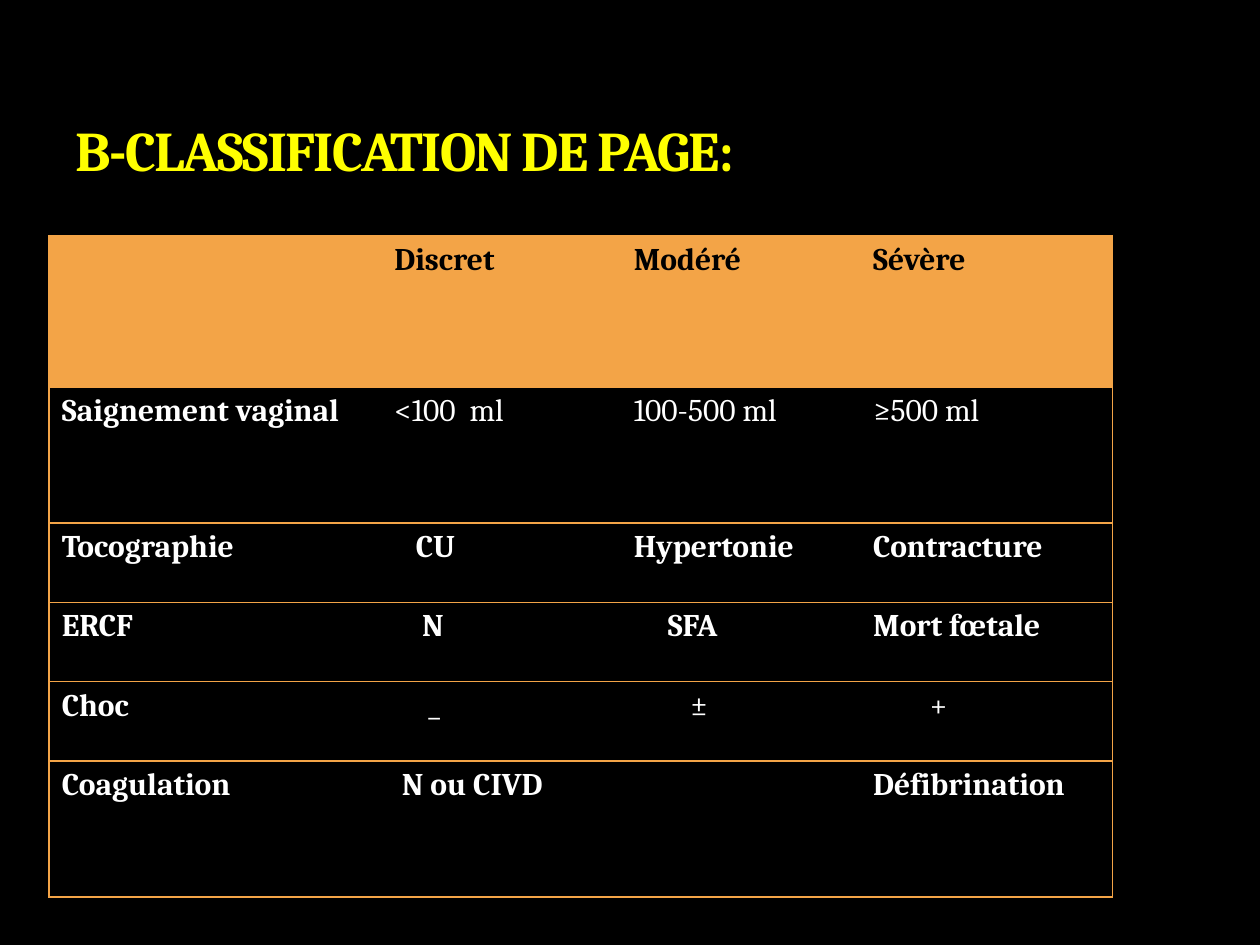
import pptx
import pptx.util
import pptx.dml.color
import pptx.enum.text
import pptx.oxml.ns
from dataclasses import dataclass
from lxml import etree

Inches = pptx.util.Inches
Pt = pptx.util.Pt
RGB = pptx.dml.color.RGBColor.from_string
qn = pptx.oxml.ns.qn


@dataclass(frozen=True)
class Theme:
    back: str = "000000"
    title: str = "FFFF00"
    edge: str = "3C4422"
    head: str = "000000"
    body: str = "FFFFFF"
    line: str = "F3A447"
    face: str = "Cambria"
    big: int = 32
    small: int = 18


THEME = Theme()
COLS = [2.64, 1.9, 1.9, 2]
ROWS = [1.2, 1.08, 0.63, 0.63, 0.63, 1.08]
CELLS = [
    ["", "Discret", "Modéré", "Sévère"],
    ["Saignement vaginal", "<100  ml", "100-500 ml", "≥500 ml"],
    ["Tocographie", "CU", "Hypertonie", "Contracture"],
    ["ERCF", "N", "SFA", "Mort fœtale"],
    ["Choc", "_", "±", "+"],
    ["Coagulation", "N ou CIVD", "", "Défibrination"],
]
PLAIN = (1, 4)
INDENT = {(2, 1): 0.17, (3, 1): 0.22, (3, 2): 0.27, (4, 1): 0.27,
          (4, 2): 0.45, (4, 3): 0.45, (5, 1): 0.06}


def style(font, color, size, bold):
    look = {"name": THEME.face, "size": Pt(size), "bold": bold}
    for key, value in look.items():
        setattr(font, key, value)
    font.color.rgb = RGB(color)


def paint(parent, color, alpha=None):
    fill = etree.SubElement(parent, qn("a:solidFill"))
    tint = etree.SubElement(fill, qn("a:srgbClr"), val=color)
    if alpha:
        etree.SubElement(tint, qn("a:alpha"), val=str(alpha * 1000))


def border(cell, sides):
    props = cell._tc.get_or_add_tcPr()
    for side in "LRTB":
        line = etree.SubElement(props, qn("a:ln" + side), w=str(Pt(1)))
        if side in sides:
            paint(line, THEME.line)
        else:
            etree.SubElement(line, qn("a:noFill"))


def add_title(slide, text):
    title = slide.shapes.title
    place = {"left": 0.5, "top": 0.17, "width": 9, "height": 1.33}
    for key, value in place.items():
        setattr(title, key, Inches(value))
    frame = title.text_frame
    frame.auto_size = pptx.enum.text.MSO_AUTO_SIZE.NONE
    frame.vertical_anchor = pptx.enum.text.MSO_ANCHOR.BOTTOM
    para = frame.paragraphs[0]
    para.alignment = pptx.enum.text.PP_ALIGN.LEFT
    run = para.add_run()
    run.text = text
    style(run.font, THEME.title, THEME.big, True)
    props = run._r.get_or_add_rPr()
    props.set("spc", "-100")
    edge = etree.Element(qn("a:ln"), w=str(Pt(0.25)))
    paint(edge, THEME.edge, 25)
    props.insert(0, edge)


def fill_cell(cell, row, col):
    sides = "TB" + {0: "L", len(COLS) - 1: "R"}.get(col, "")
    border(cell, sides)
    if row == 0:
        cell.fill.solid()
        cell.fill.fore_color.rgb = RGB(THEME.line)
    else:
        cell.fill.background()
    cell.margin_left = Inches(0.1 + INDENT.get((row, col), 0))
    cell.text = CELLS[row][col]
    color = THEME.body if row else THEME.head
    bold = col == 0 or row not in PLAIN
    style(cell.text_frame.paragraphs[0].font, color, THEME.small, bold)


def add_grid(slide):
    frame = slide.shapes.add_table(
        len(ROWS), len(COLS), Inches(0.39), Inches(1.87),
        Inches(sum(COLS)), Inches(sum(ROWS)))
    table = frame.table
    table.horz_banding = False
    for col, width in zip(table.columns, COLS):
        col.width = Inches(width)
    for row, height in zip(table.rows, ROWS):
        row.height = Inches(height)
    for row in range(len(ROWS)):
        for col in range(len(COLS)):
            fill_cell(table.cell(row, col), row, col)


def main():
    deck = pptx.Presentation()
    deck.slide_width = Inches(10)
    deck.slide_height = Inches(7.5)
    slide = deck.slides.add_slide(deck.slide_layouts[5])
    slide.background.fill.solid()
    slide.background.fill.fore_color.rgb = RGB(THEME.back)
    add_grid(slide)
    add_title(slide, "B-CLASSIFICATION DE PAGE:")
    deck.save("out.pptx")


if __name__ == "__main__":
    main()
